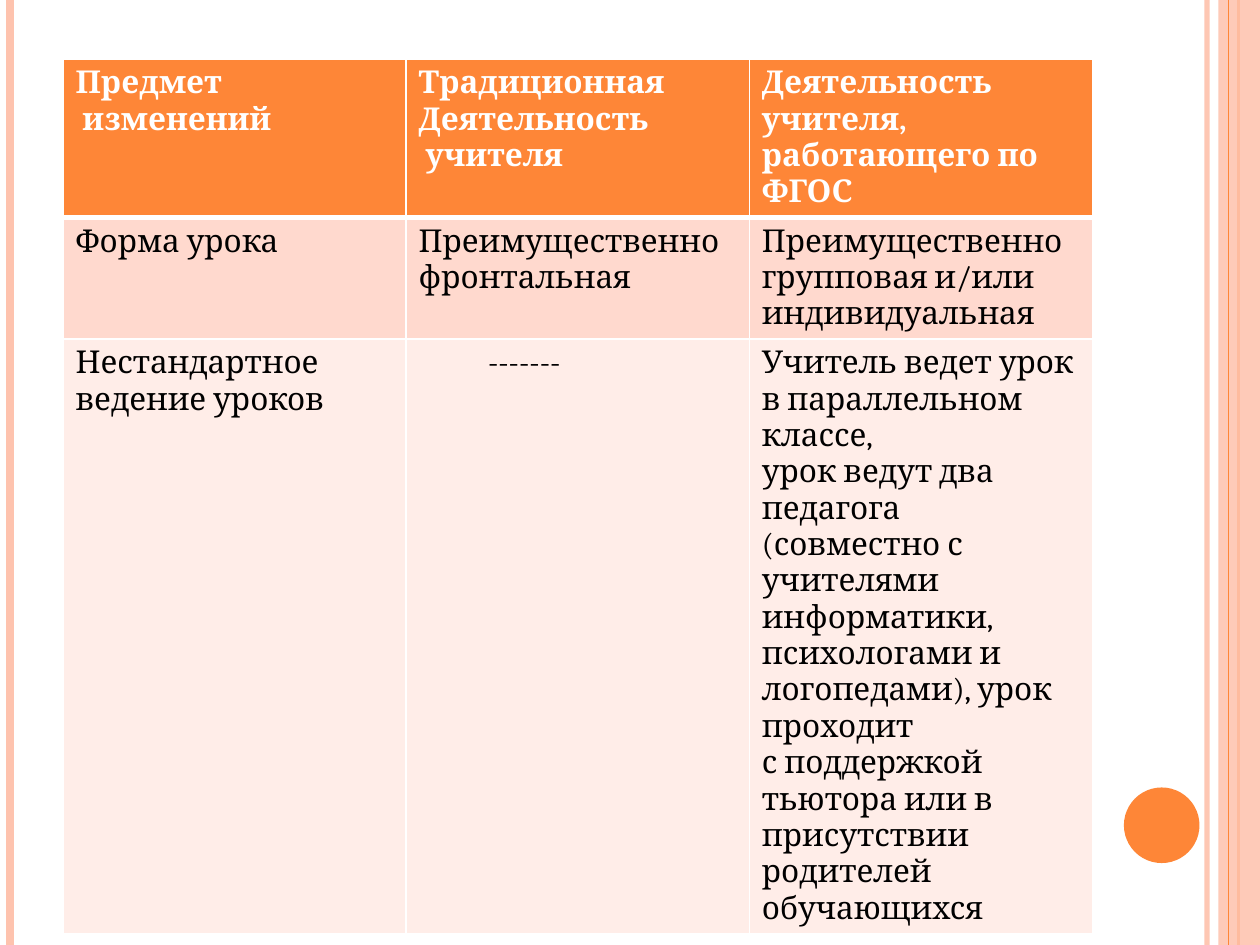
from lxml import etree
from pptx import Presentation
from pptx import util as u
from pptx.dml.color import RGBColor
from pptx.enum import shapes
from pptx.oxml.ns import qn

ORANGE = RGBColor(0xFE, 0x86, 0x37)
PEACH = RGBColor(0xFE, 0xC3, 0xAE)
ROSE = RGBColor(0xFF, 0xD9, 0xCE)
PALE = RGBColor(0xFF, 0xED, 0xE8)
WHITE = RGBColor(0xFF, 0xFF, 0xFF)
BLACK = RGBColor(0, 0, 0)
FONT, SIZE = "Cambria", 18
WIDE, HIGH = 10, 7.5

# Each cell is a list of paragraphs
ROWS = [
    [["Предмет", " изменений"],
     ["Традиционная", "Деятельность", " учителя"],
     ["Деятельность учителя,", "работающего по ФГОС"]],
    [["Форма урока"],
     ["Преимущественно фронтальная"],
     ["Преимущественно групповая и/или индивидуальная"]],
    [["Нестандартное", "ведение уроков"],
     ["-------"],
     ["Учитель ведет урок в параллельном классе,",
      "урок ведут два педагога (совместно с",
      "учителями информатики, психологами и логопедами), урок проходит",
      "с поддержкой тьютора или в присутствии родителей обучающихся"]],
]
FILLS = [ORANGE, ROSE, PALE]
DASH_INDENT = 0.55

# x, width in points, colour, opacity in percent
BACK_LINES = [(9.58, 3, PEACH, 93), (0.08, 4.5, PEACH, 100), (9.83, 1.5, ORANGE, 100)]
FRONT_LINE = (9.75, 0.75, ORANGE, 100)


def fade(item, pct):
    """Set the opacity of the solid colour inside a shape's properties."""
    if pct < 100:
        color = item._element.spPr.find(".//" + qn("a:srgbClr"))
        etree.SubElement(color, qn("a:alpha"), val=str(pct * 1000))


def stripe(slide, x, width, color, pct):
    line = slide.shapes.add_connector(
        shapes.MSO_CONNECTOR.STRAIGHT, u.Inches(x), 0, u.Inches(x), u.Inches(HIGH))
    line.line.color.rgb = color
    line.line.width = u.Pt(width)
    fade(line, pct)
    etree.SubElement(line._element.spPr, qn("a:effectLst"))


def solid(slide, kind, box, color, pct=100):
    shape = slide.shapes.add_shape(kind, *map(u.Inches, box))
    shape.shadow.inherit = False
    shape.fill.solid()
    shape.fill.fore_color.rgb = color
    shape.line.fill.background()
    fade(shape, pct)


def border(cell, heavy):
    """Draw white cell edges, with thick ones on the sides named in heavy."""
    props = cell._tc.get_or_add_tcPr()
    for place, side in enumerate("LRTB"):
        width = u.Pt(3 if side in heavy else 1)
        edge = etree.Element(qn("a:ln" + side), w=str(width))
        fill = etree.SubElement(edge, qn("a:solidFill"))
        etree.SubElement(fill, qn("a:srgbClr"), val=str(WHITE))
        props.insert(place, edge)


def write(cell, lines, head):
    frame = cell.text_frame
    for i, line in enumerate(lines):
        para = frame.add_paragraph() if i else frame.paragraphs[0]
        run = para.add_run()
        run.text = line
        run.font.name, run.font.size = FONT, u.Pt(SIZE)
        run.font.bold = head
        run.font.color.rgb = WHITE if head else BLACK


def main():
    prs = Presentation()
    prs.slide_width, prs.slide_height = u.Inches(WIDE), u.Inches(HIGH)
    slide = prs.slides.add_slide(prs.slide_layouts[6])

    for line in BACK_LINES:
        stripe(slide, *line)
    solid(slide, shapes.MSO_SHAPE.RECTANGLE, (9.67, 0, 0.33, HIGH), PEACH, 87)
    stripe(slide, *FRONT_LINE)
    solid(slide, shapes.MSO_SHAPE.OVAL, (8.92, 6.25, 0.6, 0.6), ORANGE)

    # Rows start at one line high and grow with their text
    box = (0.5, 0.47, 8.17, 0.41 * len(ROWS))
    table = slide.shapes.add_table(len(ROWS), len(ROWS[0]), *map(u.Inches, box)).table
    for r, row in enumerate(ROWS):
        for c, lines in enumerate(row):
            cell = table.cell(r, c)
            cell.fill.solid()
            cell.fill.fore_color.rgb = FILLS[r]
            border(cell, {0: "B", 1: "T"}.get(r, ""))
            write(cell, lines, r == 0)
    table.cell(2, 1).margin_left = u.Inches(0.1 + DASH_INDENT)

    prs.save("out.pptx")


if __name__ == "__main__":
    main()
